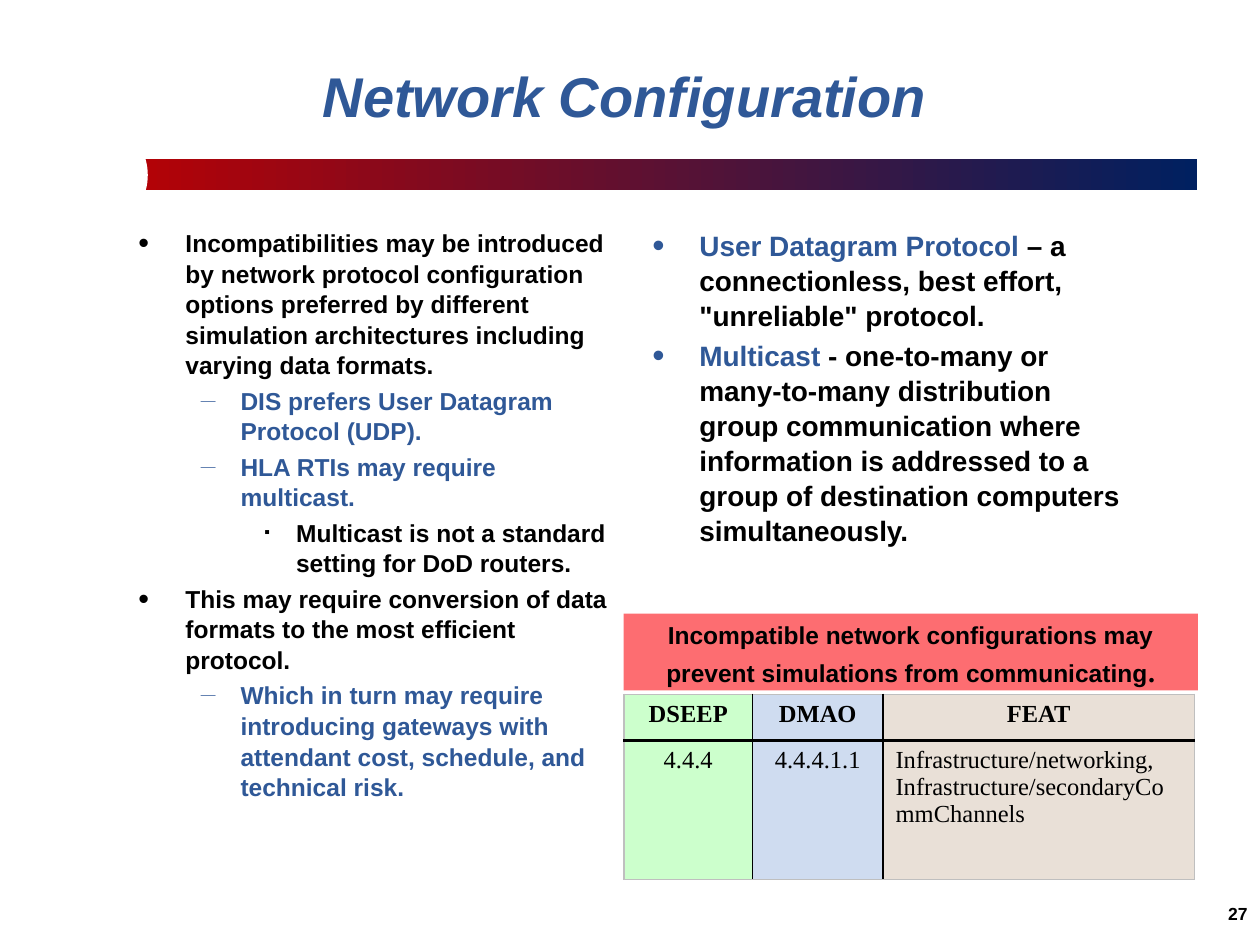
from lxml.etree import SubElement
from pptx import Presentation
from pptx.dml.color import RGBColor
from pptx.enum.shapes import MSO_SHAPE as Preset
from pptx.enum.text import MSO_ANCHOR as Anchor, PP_ALIGN as Align
from pptx.oxml.ns import qn
from pptx.util import Cm, Pt

BLACK, BLUE, WHITE = "000000", "2F5897", "FFFFFF"
SANS, SERIF = "Arial", "Times New Roman"

# Bullet styles by level: indent and hanging in cm, sign, size in percent, font
LEVELS = [
    (0.95, 0.95, "•", 125, SANS),
    (2.06, 0.8, "―", 60, SERIF),
    (3.18, 0.64, "▪", 65, SANS),
]

ISSUES = [
    (0, [("Incompatibilities may be introduced by network protocol configuration options "
          "preferred by different simulation architectures including varying data formats.", BLACK)]),
    (1, [("DIS prefers User Datagram Protocol (UDP).", BLUE)]),
    (1, [("HLA RTIs may require multicast.", BLUE)]),
    (2, [("Multicast is not a standard setting for DoD routers.", BLACK)]),
    (0, [("This may require conversion of data formats to the most efficient protocol.", BLACK)]),
    (1, [("Which in turn may require introducing gateways with attendant cost, schedule, "
          "and technical risk.", BLUE)]),
]
PROTOCOLS = [
    (0, [("User Datagram Protocol ", BLUE),
         ("– a connectionless, best effort, \"unreliable\" protocol.", BLACK)]),
    (0, [("Multicast ", BLUE),
         ("- one-to-many or many-to-many distribution group communication where information "
          "is addressed to a group of destination computers simultaneously.", BLACK)]),
]
# Reference columns: width in cm, fill, heading, entry, alignment of the entry
COLUMNS = [
    (2.59, "CCFFCC", "DSEEP", "4.4.4", Align.CENTER),
    (2.63, "CFDCF0", "DMAO", "4.4.4.1.1", Align.CENTER),
    (6.28, "E9E0D7", "FEAT", "Infrastructure/networking, Infrastructure/secondaryCommChannels",
     Align.LEFT),
]
ROW_HEIGHTS = [0.93, 2.8]


def color(value):
    return RGBColor.from_string(value)


def set_font(font, size, name=SANS, fill=BLACK, bold=True, italic=False):
    font.size, font.name, font.bold, font.italic = Pt(size), name, bold, italic
    font.color.rgb = color(fill)


def add_block(page, box, preset):
    block = page.shapes.add_shape(preset, *map(Cm, box))
    block.shadow.inherit = False
    block.line.fill.background()
    return block


def add_text_frame(page, box, anchor=Anchor.TOP):
    frame = page.shapes.add_textbox(*map(Cm, box)).text_frame
    frame.word_wrap = True
    frame.vertical_anchor = anchor
    return frame


def add_line(page, box, text, size, align, anchor=Anchor.TOP, **style):
    para = add_text_frame(page, box, anchor).paragraphs[0]
    para.text = text
    para.alignment = align
    set_font(para.font, size, **style)


def add_header(page, box):
    left, top, width, height = box
    # Title
    add_line(page, (left + 0.43, top, width - 1.07, 2.54), "Network Configuration", 32,
             Align.CENTER, Anchor.MIDDLE, fill=BLUE, italic=True)
    # Gradient bar, cut at its left end by a white disc
    bar = add_block(page, (left, top + height - 0.64, width, 0.64), Preset.RECTANGLE)
    bar.fill.gradient()
    bar.fill.gradient_angle = 0
    for stop, shade in zip(bar.fill.gradient_stops, ("C00000", "002060")):
        stop.color.rgb = color(shade)
    disc = add_block(page, (left - 0.63, top + height - 1.48, 2.34, 2.34), Preset.OVAL)
    disc.fill.solid()
    disc.fill.fore_color.rgb = color(WHITE)


def set_bullet(para, level):
    indent, hanging, sign, percent, font = LEVELS[level]
    props = para._p.get_or_add_pPr()
    props.set("marL", str(Cm(indent)))
    props.set("indent", str(-Cm(hanging)))
    SubElement(props, qn("a:buSzPct"), val=str(percent * 1000))
    SubElement(props, qn("a:buFont"), typeface=font)
    SubElement(props, qn("a:buChar"), char=sign)


def add_bullets(page, box, items, size):
    frame = add_text_frame(page, box)
    for index, (level, spans) in enumerate(items):
        para = frame.add_paragraph() if index else frame.paragraphs[0]
        para.level = level
        para.line_spacing = 1.04
        para.space_before = Pt(0.2 * size if index else 0)
        set_bullet(para, level)
        set_font(para.font, size, fill=spans[0][1])
        for text, fill in spans:
            span = para.add_run()
            span.text = text
            span.font.color.rgb = color(fill)


def add_callout(page, box):
    block = add_block(page, box, Preset.RECTANGLE)
    block.fill.solid()
    block.fill.fore_color.rgb = color("FD6D71")
    frame = block.text_frame
    frame.word_wrap = True
    frame.vertical_anchor = Anchor.MIDDLE
    para = frame.paragraphs[0]
    para.alignment = Align.CENTER
    para.line_spacing = 1.15
    message = "Incompatible network configurations may prevent simulations from communicating"
    for text, size, name in ((message, 14, SANS), (".", 16, SERIF)):
        span = para.add_run()
        span.text = text
        set_font(span.font, size, name)


def set_borders(cell, first_row, last_row, first_column, last_column):
    outer, inner, rule = ("BFBFBF", 1), (BLACK, 1), (BLACK, 1.5)
    sides = {
        "a:lnL": outer if first_column else inner,
        "a:lnR": outer if last_column else inner,
        "a:lnT": outer if first_row else rule,
        "a:lnB": outer if last_row else rule,
    }
    props = cell._tc.get_or_add_tcPr()
    for tag, (shade, width) in sides.items():
        line = SubElement(props, qn(tag), w=str(Pt(width)))
        fill = SubElement(line, qn("a:solidFill"))
        SubElement(fill, qn("a:srgbClr"), val=shade)


def add_references(page, box):
    last_row, last_column = len(ROW_HEIGHTS) - 1, len(COLUMNS) - 1
    table = page.shapes.add_table(last_row + 1, last_column + 1, *map(Cm, box)).table
    for row, height in zip(table.rows, ROW_HEIGHTS):
        row.height = Cm(height)
    for x, (width, shade, heading, entry, align) in enumerate(COLUMNS):
        table.columns[x].width = Cm(width)
        for y, text in enumerate((heading, entry)):
            cell = table.cell(y, x)
            set_borders(cell, y == 0, y == last_row, x == 0, x == last_column)
            cell.fill.solid()
            cell.fill.fore_color.rgb = color(shade)
            para = cell.text_frame.paragraphs[0]
            para.text = text
            para.alignment = align if y else Align.CENTER
            set_font(para.font, 14, SERIF, bold=y == 0)


def main():
    deck = Presentation()
    deck.slide_width, deck.slide_height = Cm(25.4), Cm(19.05)
    page = deck.slides.add_slide(deck.slide_layouts[6])

    add_header(page, (1.27, 0.64, 22.86, 3.2))
    add_bullets(page, (2.54, 4.45, 9.96, 12.5), ISSUES, 14)
    add_bullets(page, (12.9, 4.45, 9.96, 7.11), PROTOCOLS, 16)
    add_references(page, (12.58, 14, 11.5, 3.73))
    add_callout(page, (12.57, 12.37, 11.58, 1.55))
    # Page number
    add_line(page, (24.36, 18.08, 1.04, 0.96), "27", 10, Align.RIGHT)

    deck.save("out.pptx")


if __name__ == "__main__":
    main()
